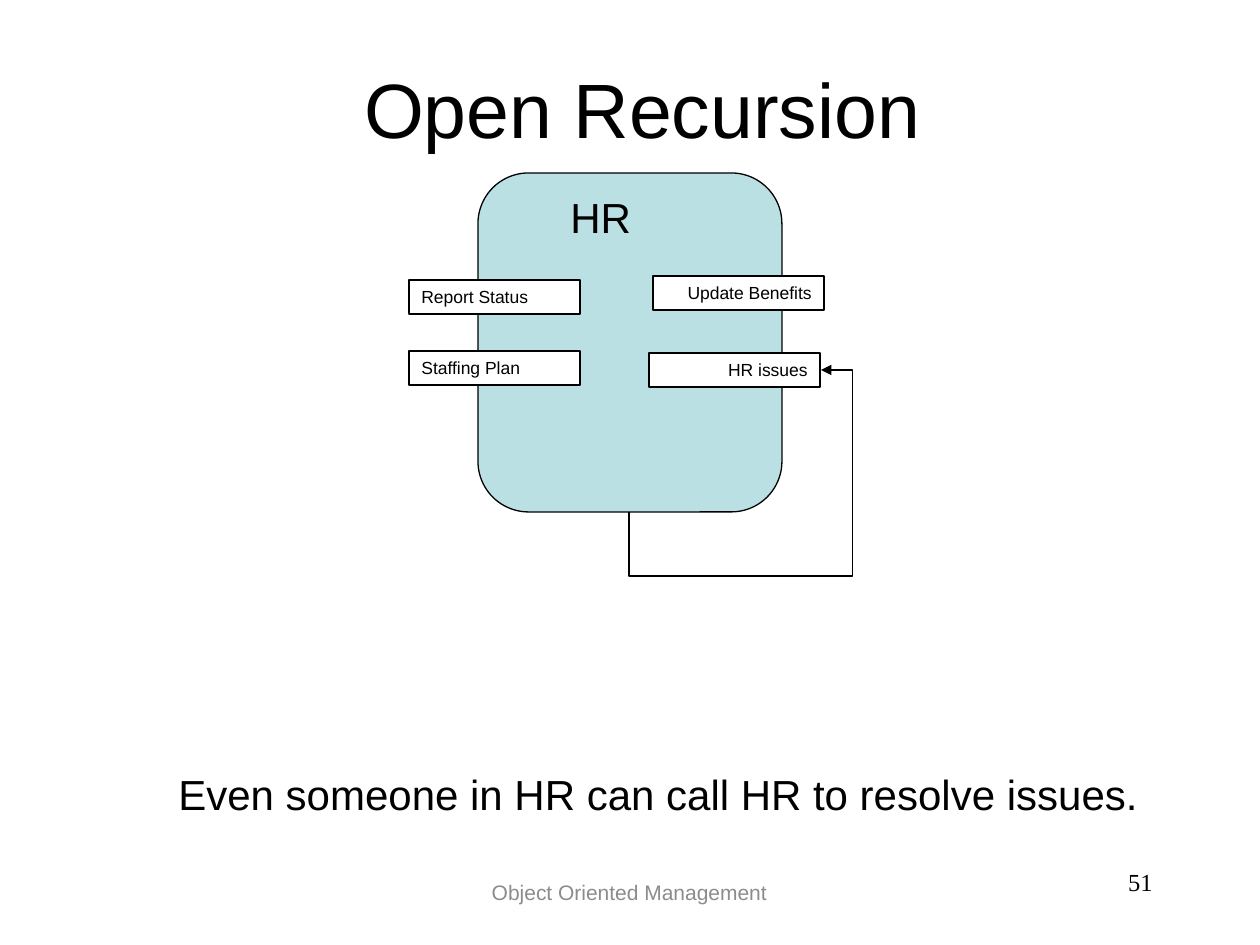
from pptx import Presentation
from pptx.dml.color import RGBColor
from pptx.enum.shapes import MSO_CONNECTOR, MSO_SHAPE
from pptx.enum.text import MSO_ANCHOR, PP_ALIGN
from pptx.oxml.ns import qn
from pptx.util import Emu, Pt
from lxml.etree import SubElement

SCALE = 914400 / 126
BLACK = RGBColor(0x00, 0x00, 0x00)
WHITE = RGBColor(0xFF, 0xFF, 0xFF)
TEAL = RGBColor(0xBB, 0xE0, 0xE3)
GRAY = RGBColor(0x8C, 0x8C, 0x8C)


def px(*values):
    return [Emu(round(v * SCALE)) for v in values]


def set_text(sp, text, size, align, anchor=MSO_ANCHOR.TOP, color=BLACK, font="Arial", wrap=True):
    tf = sp.text_frame
    tf.text = text
    tf.word_wrap = wrap
    tf.vertical_anchor = anchor
    p = tf.paragraphs[0]
    p.alignment = align
    r = p.runs[0]
    r.font.size = Pt(size)
    r.font.name = font
    r.font.color.rgb = color


prs = Presentation()
prs.slide_width, prs.slide_height = px(1260, 945)
s = prs.slides.add_slide(prs.slide_layouts[5])

title = s.shapes.title
title.left, title.top, title.width, title.height = px(107, 55, 1071, 105)
set_text(title, "Open Recursion", 44, PP_ALIGN.CENTER, MSO_ANCHOR.MIDDLE)

caption = s.shapes.add_textbox(*px(166, 762, 1007, 64))
set_text(caption, "Even someone in HR can call HR to resolve issues.", 24, PP_ALIGN.LEFT, wrap=False)

hr = s.shapes.add_shape(MSO_SHAPE.ROUNDED_RECTANGLE, *px(478, 173, 304, 339))
hr.shadow.inherit = False
hr.fill.solid()
hr.fill.fore_color.rgb = TEAL
hr.line.color.rgb = BLACK
hr.line.width = Pt(0.75)

label = s.shapes.add_textbox(*px(558, 185, 87, 48))
set_text(label, "HR", 24, PP_ALIGN.LEFT, wrap=False)

footer = s.shapes.add_textbox(*px(372, 861, 515, 62))
set_text(footer, "Object Oriented Management", 12, PP_ALIGN.CENTER, MSO_ANCHOR.MIDDLE, GRAY)

number = s.shapes.add_textbox(*px(903, 861, 262, 62))
set_text(number, "51", 14, PP_ALIGN.RIGHT, font="Times New Roman")

methods = [
    ("Report Status", 409, 280, PP_ALIGN.LEFT),
    ("Staffing Plan", 409, 351, PP_ALIGN.LEFT),
    ("Update Benefits", 653, 276, PP_ALIGN.RIGHT),
    ("HR issues", 649, 353, PP_ALIGN.RIGHT),
]
boxes = {}
for text, x, y, align in methods:
    sp = s.shapes.add_shape(MSO_SHAPE.RECTANGLE, *px(x, y, 171, 34))
    sp.shadow.inherit = False
    sp.fill.solid()
    sp.fill.fore_color.rgb = WHITE
    sp.line.color.rgb = BLACK
    sp.line.width = Pt(1.5)
    set_text(sp, text, 10, align)
    boxes[text] = sp

call = s.shapes.add_connector(MSO_CONNECTOR.ELBOW, *px(630, 512, 820, 370))
call.begin_connect(hr, 2)
call.end_connect(boxes["HR issues"], 3)
call.left, call.top, call.width, call.height = px(654, 345, 142, 192)
call.line.color.rgb = BLACK
call.line.width = Pt(0.75)
sp_pr = call._element.spPr
xfrm = sp_pr.find(qn("a:xfrm"))
for name, value in (("rot", "5400000"), ("flipH", "1"), ("flipV", "1")):
    xfrm.set(name, value)
geom = sp_pr.find(qn("a:prstGeom"))
geom.set("prst", "bentConnector4")
guides = geom.find(qn("a:avLst"))
for name, value in (("adj1", -45000), ("adj2", 116500)):
    SubElement(guides, qn("a:gd"), name=name, fmla=f"val {value}")
SubElement(sp_pr.find(qn("a:ln")), qn("a:tailEnd"), type="triangle")
SubElement(sp_pr, qn("a:effectLst"))

prs.save("out.pptx")
